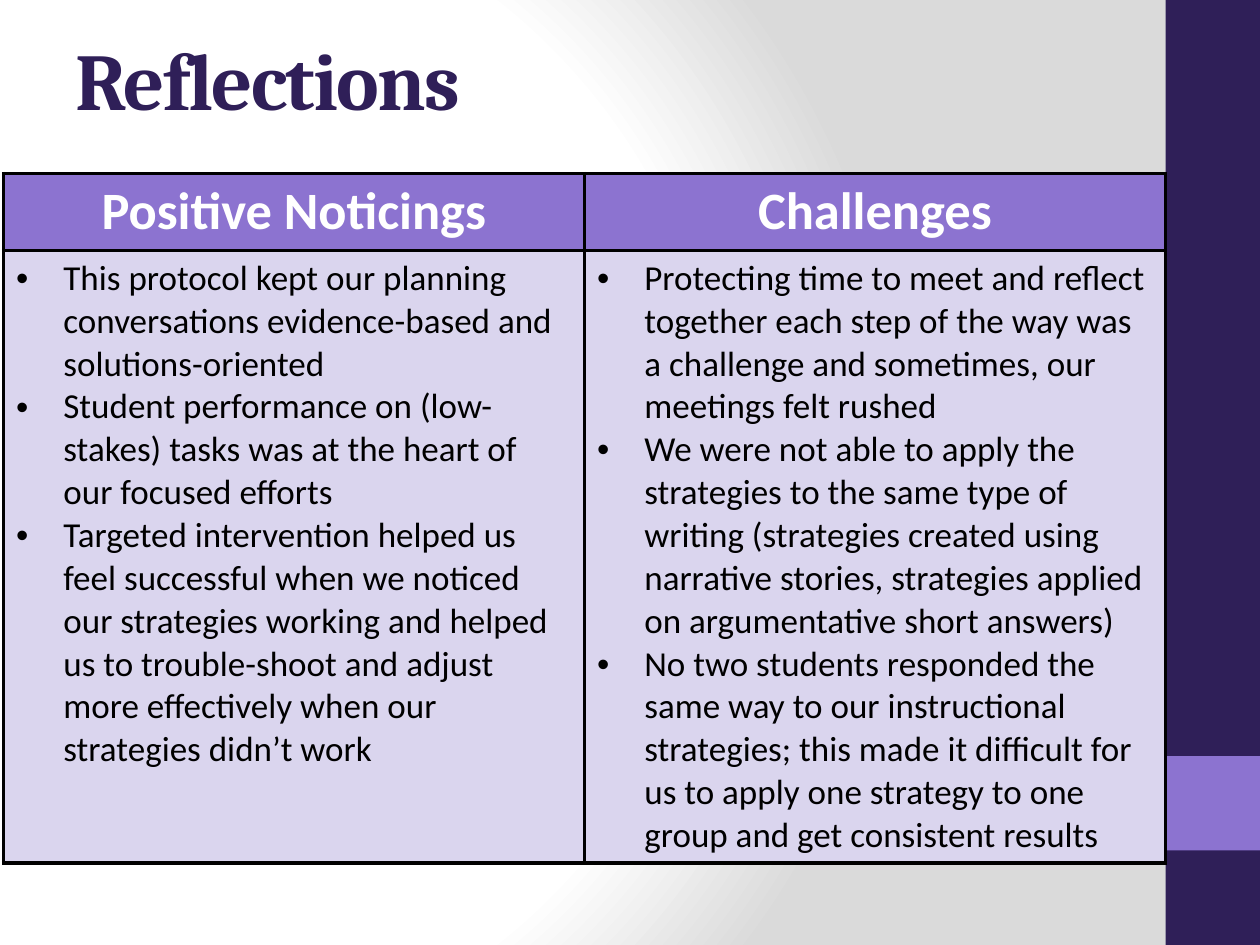
import pptx
import pptx.util
import pptx.dml.color
import pptx.enum.shapes
import pptx.enum.text
import pptx.oxml
import pptx.oxml.ns

Pt = pptx.util.Pt
RGB = pptx.dml.color.RGBColor.from_string
ALIGN = pptx.enum.text.PP_ALIGN
MIDDLE = pptx.enum.text.MSO_ANCHOR.MIDDLE
RECT = pptx.enum.shapes.MSO_SHAPE.RECTANGLE
NS = pptx.oxml.ns.nsdecls("a")

# Content
TITLE = "Reflections"
COLUMNS = {
    "Positive Noticings": [
        "This protocol kept our planning conversations evidence-based and solutions-oriented",
        "Student performance on (low-stakes) tasks was at the heart of our focused efforts",
        "Targeted intervention helped us feel successful when we noticed our strategies "
        "working and helped us to trouble-shoot and adjust more effectively when our "
        "strategies didn’t work",
    ],
    "Challenges": [
        "Protecting time to meet and reflect together each step of the way was a challenge "
        "and sometimes, our meetings felt rushed",
        "We were not able to apply the strategies to the same type of writing (strategies "
        "created using narrative stories, strategies applied on argumentative short answers)",
        "No two students responded the same way to our instructional strategies; this made "
        "it difficult for us to apply one strategy to one group and get consistent results",
    ],
}

# Theme: colours and type
THEME = {
    "dark": "2F1F58", "mid": "8C73D0", "pale": "DAD5EE", "rule": "000000",
    "back": [(0, "FFFFFF"), (75, "FFFFFF"), (100, "DADADA")],
    "title": {"name": "Cambria", "size": Pt(46), "bold": True, "color": "2F1F58"},
    "head": {"name": "Calibri", "size": Pt(30), "bold": True, "color": "FFFFFF"},
    "body": {"name": "Calibri", "size": Pt(20), "bold": False, "color": "000000"},
}

# Layout, in points
WIDE, HIGH = 720, 540
BAND = 54
EDGE = WIDE - BAND
LEFT, TOP = 2, 99.25
ROWS = [44, 350]
RULE = 2.25
INDENT = 27


def style(run, form):
    for key, val in form.items():
        if key == "color":
            run.font.color.rgb = RGB(val)
        else:
            setattr(run.font, key, val)


def write(frame, lines, form, align=ALIGN.LEFT, bullet=False):
    for num, line in enumerate(lines):
        para = frame.paragraphs[0] if num == 0 else frame.add_paragraph()
        para.alignment = align
        run = para.add_run()
        run.text = line
        style(run, form)
        if bullet:
            props = para._p.get_or_add_pPr()
            props.set("marL", str(Pt(INDENT)))
            props.set("indent", str(-Pt(INDENT)))
            for tag in ('buFont {} typeface="Arial"', 'buChar {} char="•"'):
                props.append(pptx.oxml.parse_xml(f"<a:{tag.format(NS)}/>"))


def block(slide, top, high, color):
    box = slide.shapes.add_shape(RECT, Pt(EDGE), Pt(top), Pt(BAND), Pt(high))
    box.shadow.inherit = False
    box.fill.solid()
    box.fill.fore_color.rgb = RGB(color)
    box.line.fill.background()


def paint(slide):
    slide.background.fill.gradient()
    old = slide.element.find(".//" + pptx.oxml.ns.qn("a:gradFill"))
    stops = "".join(f'<a:gs pos="{pos * 1000}"><a:srgbClr val="{color}"/></a:gs>'
                    for pos, color in THEME["back"])
    new = pptx.oxml.parse_xml(
        f'<a:gradFill {NS} rotWithShape="1"><a:gsLst>{stops}</a:gsLst>'
        '<a:path path="circle"><a:fillToRect l="20000" t="50000" r="100000" b="50000"/>'
        '</a:path></a:gradFill>')
    old.getparent().replace(old, new)


def dress(cell, color):
    props = cell._tc.get_or_add_tcPr()
    for side in ("lnL", "lnR", "lnT", "lnB"):
        props.append(pptx.oxml.parse_xml(
            f'<a:{side} {NS} w="{Pt(RULE)}"><a:solidFill><a:srgbClr val="{THEME["rule"]}"/>'
            f'</a:solidFill></a:{side}>'))
    cell.fill.solid()
    cell.fill.fore_color.rgb = RGB(color)


def main():
    deck = pptx.Presentation()
    deck.slide_width, deck.slide_height = Pt(WIDE), Pt(HIGH)
    slide = deck.slides.add_slide(deck.slide_layouts[6])

    # Background and side band
    paint(slide)
    block(slide, 0, HIGH, THEME["dark"])
    block(slide, HIGH - 2 * BAND, BAND, THEME["mid"])

    # Title
    frame = slide.shapes.add_textbox(Pt(36), Pt(0), Pt(600), Pt(90)).text_frame
    frame.word_wrap = True
    frame.vertical_anchor = MIDDLE
    write(frame, [TITLE], THEME["title"])
    frame.paragraphs[0].runs[0].font._element.set("spc", "-100")

    # Table
    span = EDGE - LEFT
    table = slide.shapes.add_table(len(ROWS), len(COLUMNS), Pt(LEFT), Pt(TOP),
                                   Pt(span), Pt(sum(ROWS))).table
    for row, high in zip(table.rows, ROWS):
        row.height = Pt(high)
    for num, (head, points) in enumerate(COLUMNS.items()):
        table.columns[num].width = Pt(span / len(COLUMNS))
        top, low = table.cell(0, num), table.cell(1, num)
        write(top.text_frame, [head], THEME["head"], ALIGN.CENTER)
        write(low.text_frame, points, THEME["body"], bullet=True)
        dress(top, THEME["mid"])
        dress(low, THEME["pale"])

    deck.save("out.pptx")


if __name__ == "__main__":
    main()
